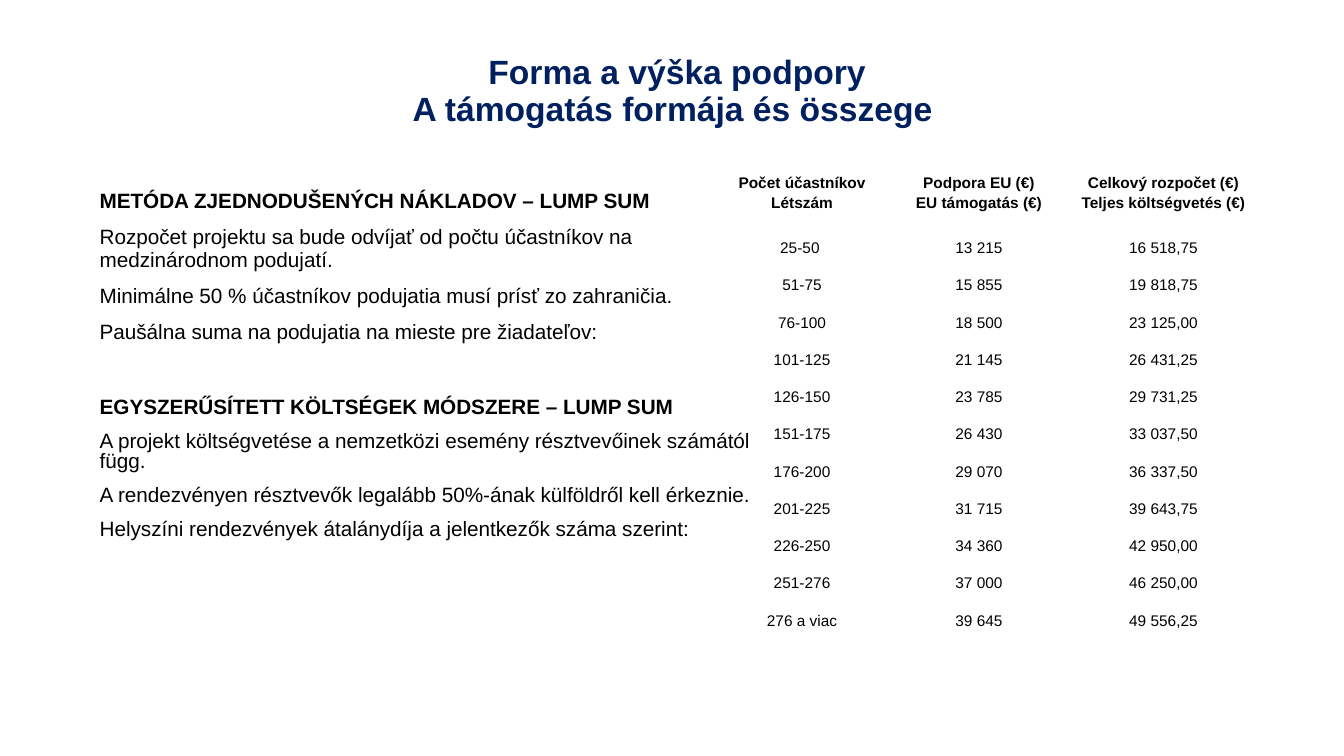
import pptx
import pptx.dml.color
import pptx.enum.text
import pptx.util
from dataclasses import dataclass

Inches = pptx.util.Inches
Pt = pptx.util.Pt
Align = pptx.enum.text.PP_ALIGN
Anchor = pptx.enum.text.MSO_ANCHOR


@dataclass(frozen=True)
class Theme:
    font: str = "Arial"
    navy: str = "002060"
    black: str = "000000"
    title: float = 24
    body: float = 14.8
    table: float = 11


class Deck:
    def __init__(self, theme):
        self.theme = theme
        self.file = pptx.Presentation()
        self.file.slide_width = Inches(13.33)
        self.file.slide_height = Inches(7.5)
        self.slide = self.file.slides.add_slide(self.file.slide_layouts[6])

    def run(self, para, text, size, color, bold):
        run = para.add_run()
        run.text = text
        run.font.name = self.theme.font
        run.font.size = Pt(size)
        run.font.bold = bold
        run.font.color.rgb = pptx.dml.color.RGBColor.from_string(color)

    def frame(self, left, top, width, height, anchor):
        place = [Inches(side) for side in (left, top, width, height)]
        frame = self.slide.shapes.add_textbox(*place).text_frame
        frame.word_wrap = True
        frame.vertical_anchor = anchor
        return frame

    def title(self, lines, place):
        """Set the lines as one centred paragraph with line breaks."""
        para = self.frame(*place, Anchor.MIDDLE).paragraphs[0]
        para.alignment = Align.CENTER
        para.line_spacing = 0.9
        for index, line in enumerate(lines):
            if index:
                para.add_line_break()
            self.run(para, line, self.theme.title, self.theme.navy, True)

    def block(self, lines, place, spacing):
        """Set a bold heading followed by plain paragraphs."""
        frame = self.frame(*place, Anchor.TOP)
        for index, line in enumerate(lines):
            para = frame.add_paragraph() if index else frame.paragraphs[0]
            props = para._p.get_or_add_pPr()
            props.set("marL", str(Inches(0.12)))
            props.set("indent", "0")
            para.alignment = Align.LEFT
            para.line_spacing = spacing
            para.space_before = Pt(10 if index else 0)
            self.run(para, line, self.theme.body, self.theme.black, index == 0)
        return frame

    def cell(self, cell, lines, bold):
        cell.fill.background()
        cell.vertical_anchor = Anchor.MIDDLE
        cell.margin_left = cell.margin_right = Inches(0.07)
        cell.margin_top = cell.margin_bottom = Inches(0.04)
        frame = cell.text_frame
        for index, line in enumerate(lines):
            para = frame.add_paragraph() if index else frame.paragraphs[0]
            para.alignment = Align.CENTER
            para.line_spacing = 1.2
            self.run(para, line, self.theme.table, self.theme.black, bold)

    def table(self, heads, rows, left, top, widths, tall, short):
        """Draw a plain table: a tall bold head row, then short rows."""
        heights = [tall] + [short] * len(rows)
        table = self.slide.shapes.add_table(
            len(heights), len(widths), Inches(left), Inches(top),
            Inches(sum(widths)), Inches(sum(heights))).table
        table.first_row = table.horz_banding = False
        for column, width in zip(table.columns, widths):
            column.width = Inches(width)
        for row, height in zip(table.rows, heights):
            row.height = Inches(height)
        for col, lines in enumerate(heads):
            self.cell(table.cell(0, col), lines, True)
        for index, row in enumerate(rows, 1):
            for col, text in enumerate(row):
                self.cell(table.cell(index, col), [text], False)


TITLE = [" Forma a výška podpory", "A támogatás formája és összege"]

SLOVAK = [
    "METÓDA ZJEDNODUŠENÝCH NÁKLADOV – LUMP SUM",
    "Rozpočet projektu sa bude odvíjať od počtu účastníkov na medzinárodnom podujatí.",
    "Minimálne 50 % účastníkov podujatia musí prísť zo zahraničia.",
    "Paušálna suma na podujatia na mieste pre žiadateľov:",
]

MAGYAR = [
    "EGYSZERŰSÍTETT KÖLTSÉGEK MÓDSZERE – LUMP SUM",
    "A projekt költségvetése a nemzetközi esemény résztvevőinek számától függ.",
    "A rendezvényen résztvevők legalább 50%-ának külföldről kell érkeznie.",
    "Helyszíni rendezvények átalánydíja a jelentkezők száma szerint:",
]

HEADS = [
    ("Počet účastníkov", "Létszám"),
    ("Podpora EU (€)", "EU támogatás (€)"),
    ("Celkový rozpočet (€)", "Teljes költségvetés (€)"),
]

GRANTS = [
    ("25-50 ", "13 215", "16 518,75"),
    ("51-75", "15 855", "19 818,75"),
    ("76-100", "18 500", "23 125,00"),
    ("101-125", "21 145", "26 431,25"),
    ("126-150", "23 785", "29 731,25"),
    ("151-175", "26 430", "33 037,50"),
    ("176-200", "29 070", "36 337,50"),
    ("201-225", "31 715", "39 643,75"),
    ("226-250", "34 360", "42 950,00"),
    ("251-276", "37 000", "46 250,00"),
    ("276 a viac", "39 645", "49 556,25"),
]


def main():
    deck = Deck(Theme())
    deck.title(TITLE, (0.92, 0.4, 11.5, 1.03))
    slovak = deck.block(SLOVAK, (0.77, 1.84, 6.8, 1.91), 0.9)
    slovak.paragraphs[-1].alignment = Align.JUSTIFY
    slovak.paragraphs[-1].space_after = Pt(8)
    deck.table(HEADS, GRANTS, 7.14, 1.54, (1.63, 1.88, 1.78), 0.72, 0.37)
    deck.block(MAGYAR, (0.77, 3.91, 6.95, 1.91), 0.8)
    deck.file.save("out.pptx")


if __name__ == "__main__":
    main()
